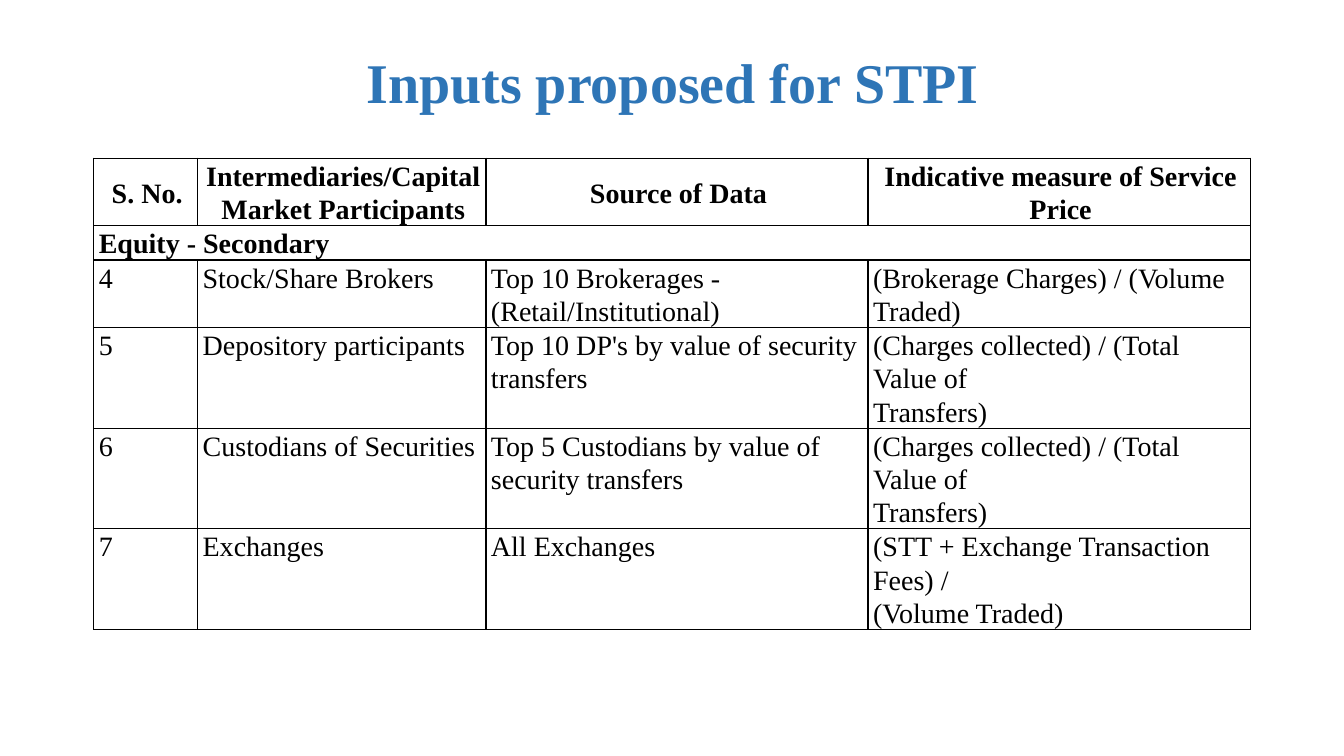
from dataclasses import dataclass

from lxml.etree import SubElement
from pptx import Presentation
from pptx.dml.color import RGBColor
from pptx.enum.text import MSO_ANCHOR, PP_ALIGN
from pptx.oxml.ns import qn
from pptx.slide import Slide
from pptx.table import Table, _Cell
from pptx.text.text import TextFrame
from pptx.util import Inches, Pt


@dataclass(frozen=True)
class Theme:
    font: str = "Times New Roman"
    title_color: str = "2E75B6"
    text_color: str = "000000"
    border_color: str = "000000"
    title_size: int = 40
    table_size: int = 20
    border_width: int = 1


@dataclass(frozen=True)
class TableRow:
    texts: tuple[str, ...]
    lines: int
    bold: bool = False
    align: PP_ALIGN = PP_ALIGN.LEFT
    anchor: MSO_ANCHOR = MSO_ANCHOR.TOP


THEME = Theme()
LINE_HEIGHT = 0.33
COLUMN_WIDTHS = (1.03, 2.86, 3.79, 3.79)
CELL_MARGINS = {
    "margin_left": Inches(0.05),
    "margin_top": Inches(0.01),
    "margin_right": Inches(0.02),
    "margin_bottom": Inches(0),
}
ROWS = (
    TableRow(
        ("S. No.", "Intermediaries/Capital Market Participants",
         "Source of Data", "Indicative measure of Service Price"),
        2, True, PP_ALIGN.CENTER, MSO_ANCHOR.MIDDLE,
    ),
    TableRow(("Equity - Secondary",), 1, True),
    TableRow(("4", "Stock/Share Brokers",
              "Top 10 Brokerages - (Retail/Institutional)",
              "(Brokerage Charges) / (Volume\nTraded)"), 2),
    TableRow(("5", "Depository participants",
              "Top 10 DP's by value of security transfers",
              "(Charges collected) / (Total Value of\nTransfers)"), 3),
    TableRow(("6", "Custodians of Securities",
              "Top 5 Custodians by value of security transfers",
              "(Charges collected) / (Total Value of\nTransfers)"), 3),
    TableRow(("7", "Exchanges", "All Exchanges",
              "(STT + Exchange Transaction Fees) /\n(Volume Traded)"), 3),
)


def set_attributes(target: object, values: dict[str, object]) -> None:
    for name, value in values.items():
        setattr(target, name, value)


def write_text(frame: TextFrame, text: str, size: int, color: str, bold: bool,
               align: PP_ALIGN, spacing: float) -> None:
    """Fill the frame, making one paragraph of each line of text."""
    frame.text = text
    for para in frame.paragraphs:
        set_attributes(para, {"alignment": align, "line_spacing": spacing})
        for span in para.runs:
            set_attributes(span.font, {"name": THEME.font, "size": Pt(size), "bold": bold})
            span.font.color.rgb = RGBColor.from_string(color)


def add_borders(cell: _Cell) -> None:
    properties = cell._tc.get_or_add_tcPr()
    for index, side in enumerate(("lnL", "lnR", "lnT", "lnB")):
        line = SubElement(properties, qn(f"a:{side}"), w=str(Pt(THEME.border_width)))
        fill = SubElement(line, qn("a:solidFill"))
        SubElement(fill, qn("a:srgbClr"), val=THEME.border_color)
        properties.insert(index, line)


def fill_row(table: Table, index: int, row: TableRow) -> None:
    table.rows[index].height = Inches(row.lines * LINE_HEIGHT)
    cells = list(table.rows[index].cells)
    for cell in cells:
        set_attributes(cell, {**CELL_MARGINS, "vertical_anchor": row.anchor})
        cell.fill.background()
        add_borders(cell)
    if len(row.texts) == 1:
        cells[0].merge(cells[-1])
    for cell, text in zip(cells, row.texts):
        write_text(cell.text_frame, text, THEME.table_size, THEME.text_color,
                   row.bold, row.align, 1.07)


def add_title(slide: Slide, text: str) -> None:
    title = slide.shapes.title
    set_attributes(title, {"left": Inches(0.92), "top": Inches(0.14),
                           "width": Inches(11.5), "height": Inches(1.42)})
    title.text_frame.vertical_anchor = MSO_ANCHOR.MIDDLE
    write_text(title.text_frame, text, THEME.title_size, THEME.title_color,
               True, PP_ALIGN.CENTER, 0.9)


def add_inputs_table(slide: Slide) -> None:
    height = sum(row.lines for row in ROWS) * LINE_HEIGHT
    table = slide.shapes.add_table(
        len(ROWS), len(COLUMN_WIDTHS), Inches(0.93), Inches(1.57),
        Inches(sum(COLUMN_WIDTHS)), Inches(height),
    ).table
    set_attributes(table, {"first_row": False, "horz_banding": False})
    for column, width in zip(table.columns, COLUMN_WIDTHS):
        column.width = Inches(width)
    for index, row in enumerate(ROWS):
        fill_row(table, index, row)


def main() -> None:
    deck = Presentation()
    set_attributes(deck, {"slide_width": Inches(13.33), "slide_height": Inches(7.5)})
    slide = deck.slides.add_slide(deck.slide_layouts.get_by_name("Title Only"))
    add_title(slide, "Inputs proposed for STPI")
    add_inputs_table(slide)
    deck.save("out.pptx")


if __name__ == "__main__":
    main()
